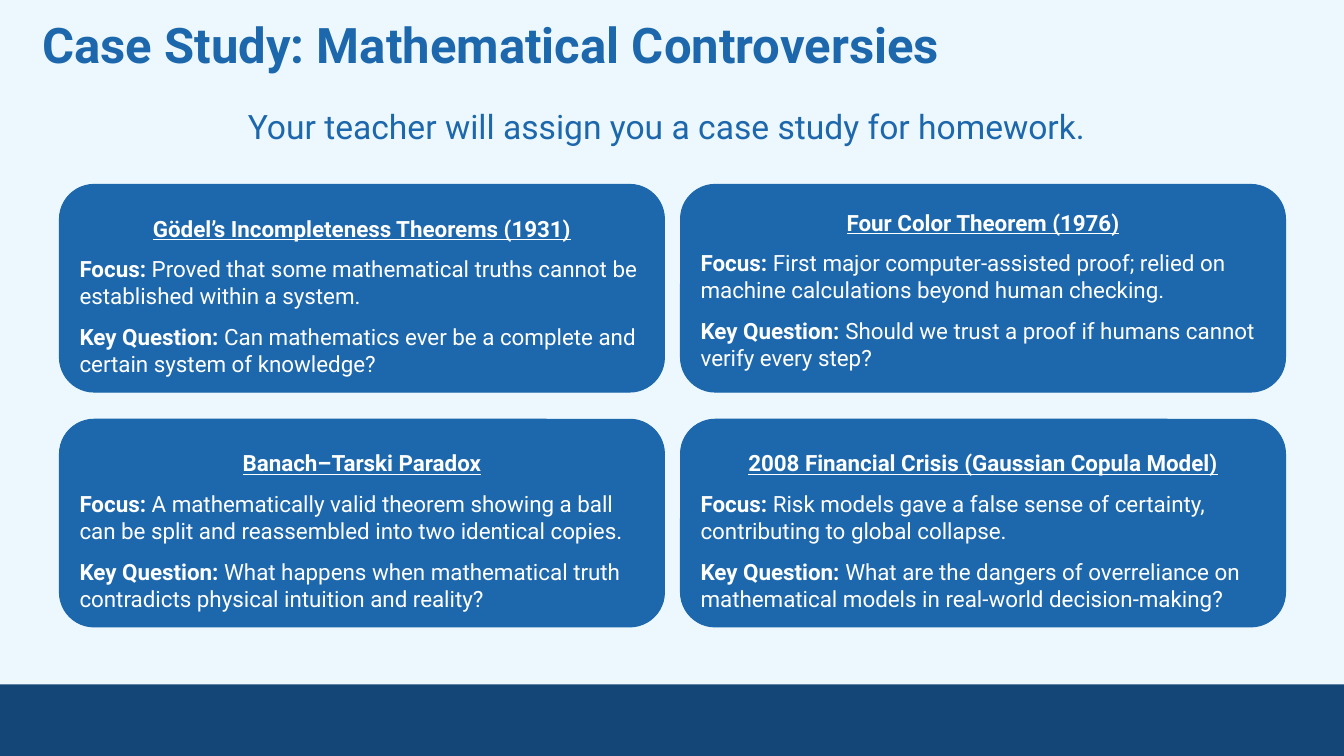
from pptx import Presentation
from pptx.dml.color import RGBColor
from pptx.enum.shapes import MSO_SHAPE
from pptx.enum.text import MSO_ANCHOR, PP_ALIGN
from pptx.util import Inches, Pt

RECT, ROUNDED = MSO_SHAPE.RECTANGLE, MSO_SHAPE.ROUNDED_RECTANGLE
TOP, BOTTOM = MSO_ANCHOR.TOP, MSO_ANCHOR.BOTTOM
LEFT, CENTER = PP_ALIGN.LEFT, PP_ALIGN.CENTER

FONT = "Roboto"
PALE, BLUE, NAVY, WHITE = "ECF8FE", "1D67AC", "144777", "FFFFFF"

TITLE = "Case Study: Mathematical Controversies"
SUBTITLE = "Your teacher will assign you a case study for homework."
# heading, focus, key question, top inset in inches
CASES = [
    ("Gödel’s Incompleteness Theorems (1931)",
     "Proved that some mathematical truths cannot be established within a system.",
     "Can mathematics ever be a complete and certain system of knowledge?", 0.2),
    ("Four Color Theorem (1976)",
     "First major computer-assisted proof; relied on machine calculations beyond human checking.",
     "Should we trust a proof if humans cannot verify every step?", 0.14),
    ("Banach–Tarski Paradox",
     "A mathematically valid theorem showing a ball can be split and reassembled into two identical copies.",
     "What happens when mathematical truth contradicts physical intuition and reality?", 0.2),
    ("2008 Financial Crisis (Gaussian Copula Model)",
     "Risk models gave a false sense of certainty, contributing to global collapse.",
     "What are the dangers of overreliance on mathematical models in real-world decision-making?", 0.2),
]

SLIDE_W, SLIDE_H = 13.33, 7.5
BAR_H = 0.71
CARD_LEFT, CARD_TOP = 0.59, 1.83
CARD_W, CARD_H = 6, 2.06
STEP_X, STEP_Y = 6.16, 2.33
COLUMNS = 2


def rgb(color):
    return RGBColor.from_string(color)


def add_run(p, text, size, color, bold=False, underline=False):
    r = p.add_run()
    r.text = text
    r.font.name = FONT
    r.font.size = Pt(size)
    r.font.color.rgb = rgb(color)
    r.font.bold = bold
    r.font.underline = underline


def set_frame(tf, inset, top=None, anchor=TOP):
    tf.word_wrap = True
    tf.vertical_anchor = anchor
    tf.margin_left = tf.margin_right = tf.margin_bottom = Inches(inset)
    tf.margin_top = Inches(inset if top is None else top)


def add_shape(slide, kind, x, y, w, h, color):
    sp = slide.shapes.add_shape(kind, Inches(x), Inches(y), Inches(w), Inches(h))
    sp.shadow.inherit = False
    sp.fill.solid()
    sp.fill.fore_color.rgb = rgb(color)
    sp.line.color.rgb = rgb(color)
    sp.line.width = Pt(0.75)
    return sp


def add_label(slide, x, y, w, h, text, size, inset, align, anchor=TOP, bold=False):
    box = slide.shapes.add_textbox(Inches(x), Inches(y), Inches(w), Inches(h))
    set_frame(box.text_frame, inset, anchor=anchor)
    p = box.text_frame.paragraphs[0]
    p.alignment = align
    add_run(p, text, size, BLUE, bold)


def add_card(slide, x, y, heading, focus, question, top):
    sp = add_shape(slide, ROUNDED, x, y, CARD_W, CARD_H, BLUE)
    sp.adjustments[0] = 0.167
    tf = sp.text_frame
    set_frame(tf, 0.1, top)
    p = tf.paragraphs[0]
    p.alignment = CENTER
    add_run(p, heading, 16, WHITE, bold=True, underline=True)
    for label, text in (("Focus: ", focus), ("Key Question: ", question)):
        p = tf.add_paragraph()
        p.alignment = LEFT
        p.space_before = Pt(10)
        add_run(p, label, 16, WHITE, bold=True)
        add_run(p, text, 16, WHITE)


def main():
    prs = Presentation()
    prs.slide_width, prs.slide_height = Inches(SLIDE_W), Inches(SLIDE_H)
    slide = prs.slides.add_slide(prs.slide_layouts[6])
    slide.background.fill.solid()
    slide.background.fill.fore_color.rgb = rgb(PALE)

    bar = add_shape(slide, RECT, 0, SLIDE_H - BAR_H, SLIDE_W, BAR_H, NAVY)
    bar.line.fill.background()
    add_label(slide, 0.29, 0, 12.99, 0.86, TITLE, 35, 0.13, LEFT, BOTTOM, bold=True)
    add_label(slide, 0.65, 0.95, 11.92, 0.61, SUBTITLE, 24, 0.1, CENTER)
    for i, case in enumerate(CASES):
        row, col = divmod(i, COLUMNS)
        add_card(slide, CARD_LEFT + col * STEP_X, CARD_TOP + row * STEP_Y, *case)

    prs.save("out.pptx")


if __name__ == "__main__":
    main()
